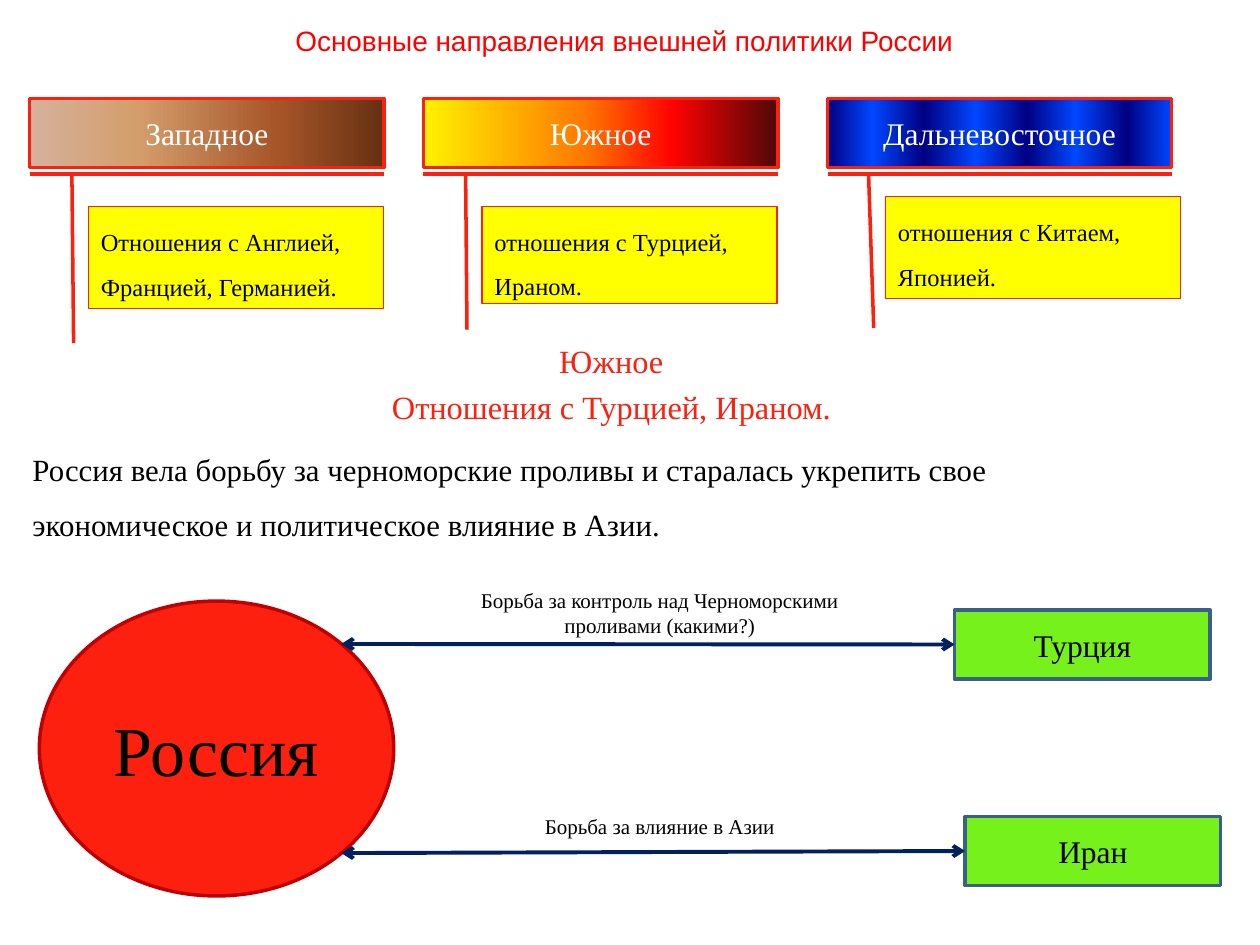
"""Build a slide on the main directions of Russian foreign policy."""
from lxml import etree
from pptx import Presentation
from pptx.dml.color import RGBColor
from pptx.enum.shapes import MSO_CONNECTOR, MSO_SHAPE as Shape
from pptx.enum.text import MSO_ANCHOR as Anchor, PP_ALIGN as Align
from pptx.oxml import parse_xml
from pptx.oxml.ns import nsdecls, qn
from pptx.util import Pt

SERIF = "Times New Roman"
RED, YELLOW, GREEN, NAVY = "FD200F", "FFFF00", "77F11B", "002060"
BLACK, WHITE = "000000", "FFFFFF"

TITLE = "Основные направления внешней политики России"
BODY = [
    ("Южное", 18.5, RED, Align.CENTER, 1),
    ("Отношения с Турцией, Ираном.", 18.5, RED, Align.CENTER, 1),
    ("Россия вела борьбу за черноморские проливы и старалась укрепить свое "
     "экономическое и политическое влияние в Азии.", 17.6, BLACK, Align.LEFT, 1.5),
]
BLUES = zip((0, 13, 28, 43, 58, 72, 87, 100), ("000082", "0047FF") * 4)
DIRECTIONS = [
    ("Западное", (17, 202.5), (0.124, -2.533),
     [(0, "D6B19C"), (30, "D49E6C"), (70, "A65528"), (100, "663012")],
     "Отношения с Англией, Францией, Германией.", (50.5, 118, 168.5, 58.3)),
    ("Южное", (242, 202.5), (0.123, -2.339),
     [(0, "FFF200"), (45, "FF7A00"), (70, "FF0300"), (100, "4D0808")],
     "отношения с Турцией, Ираном.", (275.5, 118, 168.5, 55.4)),
    ("Дальневосточное", (473, 196.5), (0.134, -2.312), list(BLUES),
     "отношения с Китаем, Японией.", (506, 112.3, 168.5, 58.3)),
]
RIVALS = [
    ("Турция", (545.5, 348.5), 368,
     "Борьба за контроль над Черноморскими проливами (какими?)", (332, 36)),
    ("Иран", (551.5, 466.5), 487.5, "Борьба за влияние в Азии", (461.5, 22)),
]
BANNER_Y, BANNER_H = 56.2, 39.6
RIVAL_W, RIVAL_H = 146, 39.6
ARROW_X = 195


def rgb(color):
    return RGBColor.from_string(color)


def write(shape, paragraphs, anchor=Anchor.TOP, font=SERIF, before=0):
    tf = shape.text_frame
    tf.word_wrap = True
    tf.vertical_anchor = anchor
    for i, (text, size, color, align, spacing) in enumerate(paragraphs):
        p = tf.add_paragraph() if i else tf.paragraphs[0]
        p.text, p.alignment, p.line_spacing = text, align, spacing
        p.space_before = Pt(before)
        p.font.name, p.font.size = font, Pt(size)
        p.font.color.rgb = rgb(color)


def add_text(s, box, paragraphs, **options):
    write(s.shapes.add_textbox(*map(Pt, box)), paragraphs, **options)


def add_box(s, kind, box, fill, line, width):
    sp = s.shapes.add_shape(kind, *map(Pt, box))
    sp.shadow.inherit = False
    if fill:
        sp.fill.solid()
        sp.fill.fore_color.rgb = rgb(fill)
    sp.line.color.rgb = rgb(line)
    sp.line.width = Pt(width)
    return sp


def set_gradient(sp, stops):
    marks = "".join(f'<a:gs pos="{pos * 1000}"><a:srgbClr val="{color}"/></a:gs>'
                    for pos, color in stops)
    grad = parse_xml(f'<a:gradFill {nsdecls("a")} rotWithShape="1"><a:gsLst>{marks}'
                     '</a:gsLst><a:lin ang="5400000" scaled="0"/></a:gradFill>')
    sp._element.spPr.find(qn("a:prstGeom")).addnext(grad)


def add_banner(s, name, left, width, callout_end, stops):
    x = left + (width - BANNER_H) / 2
    y = BANNER_Y - (width - BANNER_H) / 2
    sp = add_box(s, Shape.LINE_CALLOUT_1_BORDER_AND_ACCENT_BAR,
                 (x, y, BANNER_H, width), None, RED, 2)
    sp.rotation = 270
    for i, value in enumerate((0.119, -0.093) + callout_end):
        sp.adjustments[i] = value
    set_gradient(sp, stops)
    write(sp, [(name, 18, WHITE, Align.CENTER, 1)], Anchor.MIDDLE)
    sp.text_frame._txBody.bodyPr.set("vert", "vert")


def add_arrow(s, y, target):
    c = s.shapes.add_connector(MSO_CONNECTOR.STRAIGHT, Pt(ARROW_X), Pt(y),
                               target.left, Pt(y))
    c.end_connect(target, 1)
    c.line.color.rgb = rgb(NAVY)
    c.line.width = Pt(2.25)
    ln = c.line._get_or_add_ln()
    for end in ("a:headEnd", "a:tailEnd"):
        etree.SubElement(ln, qn(end), type="arrow")
    etree.SubElement(c._element.spPr, qn("a:effectLst"))


def main():
    prs = Presentation()
    prs.slide_width, prs.slide_height = Pt(720), Pt(540)
    s = prs.slides.add_slide(prs.slide_layouts[6])

    add_text(s, (11.5, 191.5, 675.5, 124), BODY, before=3.7)
    russia = add_box(s, Shape.OVAL, (22.5, 343.5, 202.5, 168.5), RED, "C00000", 2)
    write(russia, [("Россия", 40, BLACK, Align.CENTER, 1)], Anchor.MIDDLE)

    for name, (x, y), arrow_y, label, (label_y, label_h) in RIVALS:
        rival = add_box(s, Shape.RECTANGLE, (x, y, RIVAL_W, RIVAL_H), GREEN, "3A5F8C", 2)
        write(rival, [(name, 18, BLACK, Align.CENTER, 1)], Anchor.MIDDLE)
        add_arrow(s, arrow_y, rival)
        add_text(s, (242, label_y, 270, label_h), [(label, 12, BLACK, Align.CENTER, 1)])

    for name, (left, width), callout_end, stops, note, note_box in DIRECTIONS:
        add_banner(s, name, left, width, callout_end, stops)
        sp = add_box(s, Shape.RECTANGLE, note_box, YELLOW, RED, 0.75)
        write(sp, [(note, 14, BLACK, Align.LEFT, 1.5)])

    add_text(s, (16.5, 0, 680.5, 46), [(TITLE, 16, "FF0000", Align.CENTER, 1)],
             anchor=Anchor.MIDDLE, font="Arial")
    prs.save("out.pptx")


if __name__ == "__main__":
    main()
